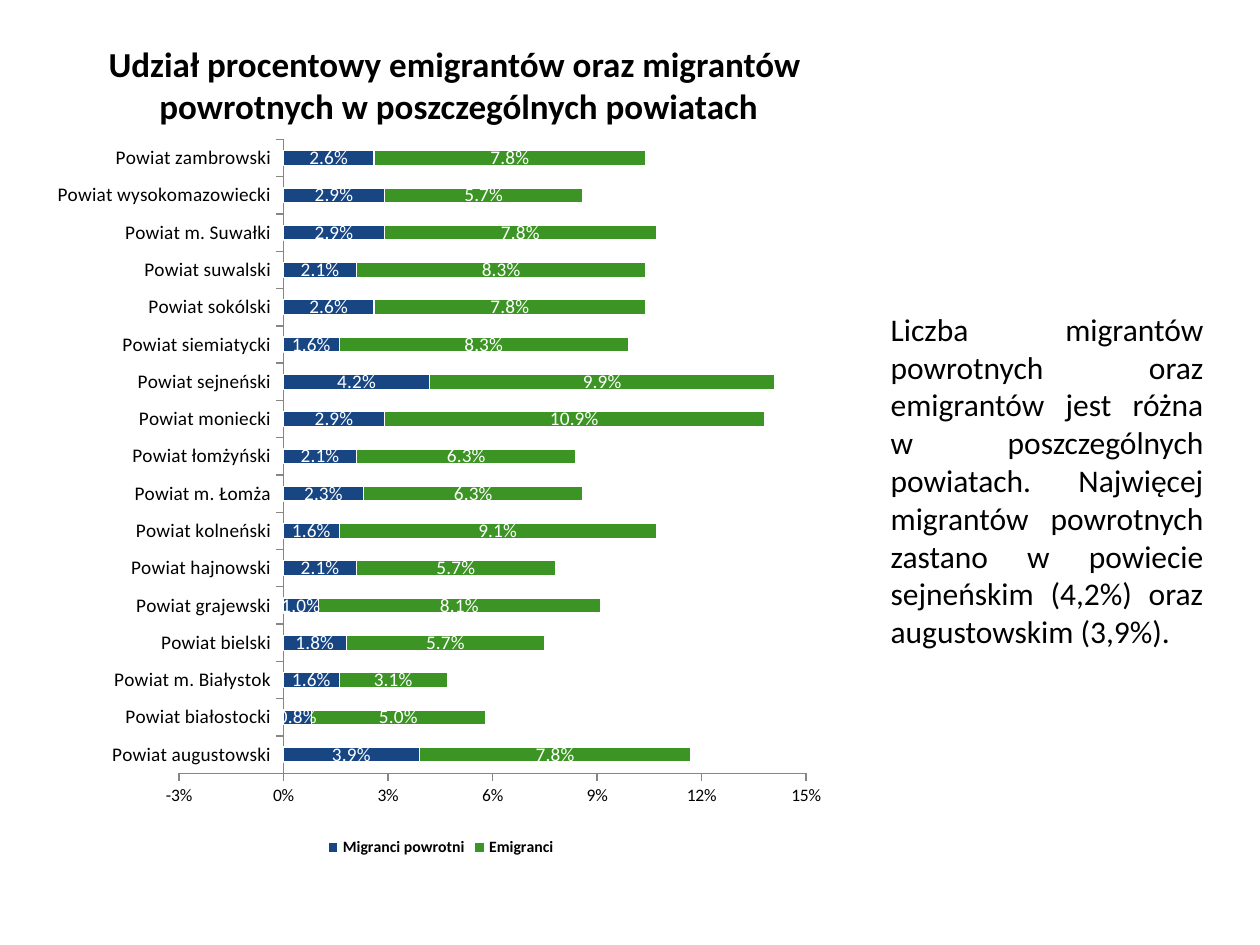
import lxml.etree
import pptx
import pptx.chart.data
import pptx.dml.color
import pptx.enum.chart
import pptx.enum.text
import pptx.oxml
import pptx.oxml.ns
import pptx.util

Inches = pptx.util.Inches
Pt = pptx.util.Pt
RGBColor = pptx.dml.color.RGBColor

BLACK = RGBColor(0x00, 0x00, 0x00)
WHITE = RGBColor(0xFF, 0xFF, 0xFF)
BLUE = RGBColor(0x18, 0x46, 0x83)
GREEN = RGBColor(0x3C, 0x94, 0x24)
GRAY = RGBColor(0x86, 0x86, 0x86)
FONT = "Calibri"

TITLE = "Udział procentowy emigrantów oraz migrantów \vpowrotnych w poszczególnych powiatach"
COMMENTARY = (
    "Liczba migrantów powrotnych oraz emigrantów jest różna w poszczególnych powiatach. "
    "Najwięcej migrantów powrotnych zastano w powiecie sejneńskim (4,2%) "
    "oraz augustowskim (3,9%). "
)
SERIES_COLORS = {"Migranci powrotni": BLUE, "Emigranci": GREEN}
COUNTIES = [
    ("augustowski", 0.039, 0.078),
    ("białostocki", 0.008, 0.05),
    ("m. Białystok", 0.016, 0.031),
    ("bielski", 0.018, 0.057),
    ("grajewski", 0.01, 0.081),
    ("hajnowski", 0.021, 0.057),
    ("kolneński", 0.016, 0.091),
    ("m. Łomża", 0.023, 0.063),
    ("łomżyński", 0.021, 0.063),
    ("moniecki", 0.029, 0.109),
    ("sejneński", 0.042, 0.099),
    ("siemiatycki", 0.016, 0.083),
    ("sokólski", 0.026, 0.078),
    ("suwalski", 0.021, 0.083),
    ("m. Suwałki", 0.029, 0.078),
    ("wysokomazowiecki", 0.029, 0.057),
    ("zambrowski", 0.026, 0.078),
]
PLOT_LAYOUT = {"x": 0.17, "y": 0.02, "w": 0.79, "h": 0.86}


def set_attributes(target, values):
    for name, value in values.items():
        setattr(target, name, value)


def format_font(font, size, color=BLACK, bold=False):
    set_attributes(font, {"name": FONT, "size": Pt(size), "bold": bold})
    font.color.rgb = color


def add_text(slide, box, text, size, alignment, bold=False):
    shape = slide.shapes.add_textbox(*map(Inches, box))
    frame = shape.text_frame
    set_attributes(frame, {
        "word_wrap": True,
        "auto_size": pptx.enum.text.MSO_AUTO_SIZE.SHAPE_TO_FIT_TEXT,
    })
    paragraph = frame.paragraphs[0]
    paragraph.text = text
    paragraph.alignment = alignment
    for run in paragraph.runs:
        format_font(run.font, size, bold=bold)


def format_axis(axis, size):
    set_attributes(axis, {
        "has_major_gridlines": False,
        "major_tick_mark": pptx.enum.chart.XL_TICK_MARK.OUTSIDE,
        "minor_tick_mark": pptx.enum.chart.XL_TICK_MARK.NONE,
    })
    axis.format.line.color.rgb = GRAY
    axis.format.line.width = Pt(0.75)
    format_font(axis.tick_labels.font, size)


def format_series(series):
    series.format.fill.solid()
    series.format.fill.fore_color.rgb = SERIES_COLORS[series.name]
    series.format.line.color.rgb = WHITE
    series.format.line.width = Pt(0.75)
    labels = series.data_labels
    set_attributes(labels, {
        "show_value": True,
        "position": pptx.enum.chart.XL_LABEL_POSITION.CENTER,
        "number_format": "0.0%",
        "number_format_is_linked": False,
    })
    format_font(labels.font, 11, WHITE)


def place_plot(chart):
    plot_area = chart.plots[0]._element.getparent()
    qualified = pptx.oxml.ns.qn
    for old_layout in plot_area.findall(qualified("c:layout")):
        plot_area.remove(old_layout)
    layout = pptx.oxml.parse_xml(f"<c:layout {pptx.oxml.ns.nsdecls('c')}/>")
    manual = lxml.etree.SubElement(layout, qualified("c:manualLayout"))
    settings = {"layoutTarget": "inner", "xMode": "edge", "yMode": "edge", **PLOT_LAYOUT}
    for name, value in settings.items():
        lxml.etree.SubElement(manual, qualified(f"c:{name}")).set("val", str(value))
    plot_area.insert(0, layout)


def add_county_chart(slide):
    names, *value_columns = zip(*COUNTIES)
    data = pptx.chart.data.CategoryChartData(number_format="0.0%")
    data.categories = [f"Powiat {name}" for name in names]
    for series_name, values in zip(SERIES_COLORS, value_columns):
        data.add_series(series_name, values)
    chart = slide.shapes.add_chart(
        pptx.enum.chart.XL_CHART_TYPE.BAR_STACKED,
        Inches(0.35), Inches(0.99), Inches(6.3), Inches(5.85), data,
    ).chart
    set_attributes(chart, {"has_title": False, "has_legend": True})
    format_font(chart.font, 10)
    set_attributes(chart.plots[0], {
        "gap_width": 150, "overlap": 100, "vary_by_categories": False,
    })
    for series in chart.plots[0].series:
        format_series(series)
    format_axis(chart.category_axis, 11)
    format_axis(chart.value_axis, 10)
    set_attributes(chart.value_axis, {
        "minimum_scale": -0.03, "maximum_scale": 0.15, "major_unit": 0.03,
    })
    set_attributes(chart.value_axis.tick_labels, {
        "number_format": "0%", "number_format_is_linked": False,
    })
    set_attributes(chart.legend, {
        "position": pptx.enum.chart.XL_LEGEND_POSITION.BOTTOM,
        "include_in_layout": False,
    })
    format_font(chart.legend.font, 9, bold=True)
    place_plot(chart)


def main():
    presentation = pptx.Presentation()
    set_attributes(presentation, {"slide_width": Inches(10), "slide_height": Inches(7.5)})
    slide = presentation.slides.add_slide(presentation.slide_layouts[6])
    alignments = pptx.enum.text.PP_ALIGN
    add_text(slide, (0.67, 0.29, 5.94, 0.77), TITLE, 20, alignments.CENTER, bold=True)
    add_county_chart(slide)
    add_text(slide, (6.97, 2.41, 2.68, 2.83), COMMENTARY, 18, alignments.JUSTIFY)
    presentation.save("out.pptx")


if __name__ == "__main__":
    main()
